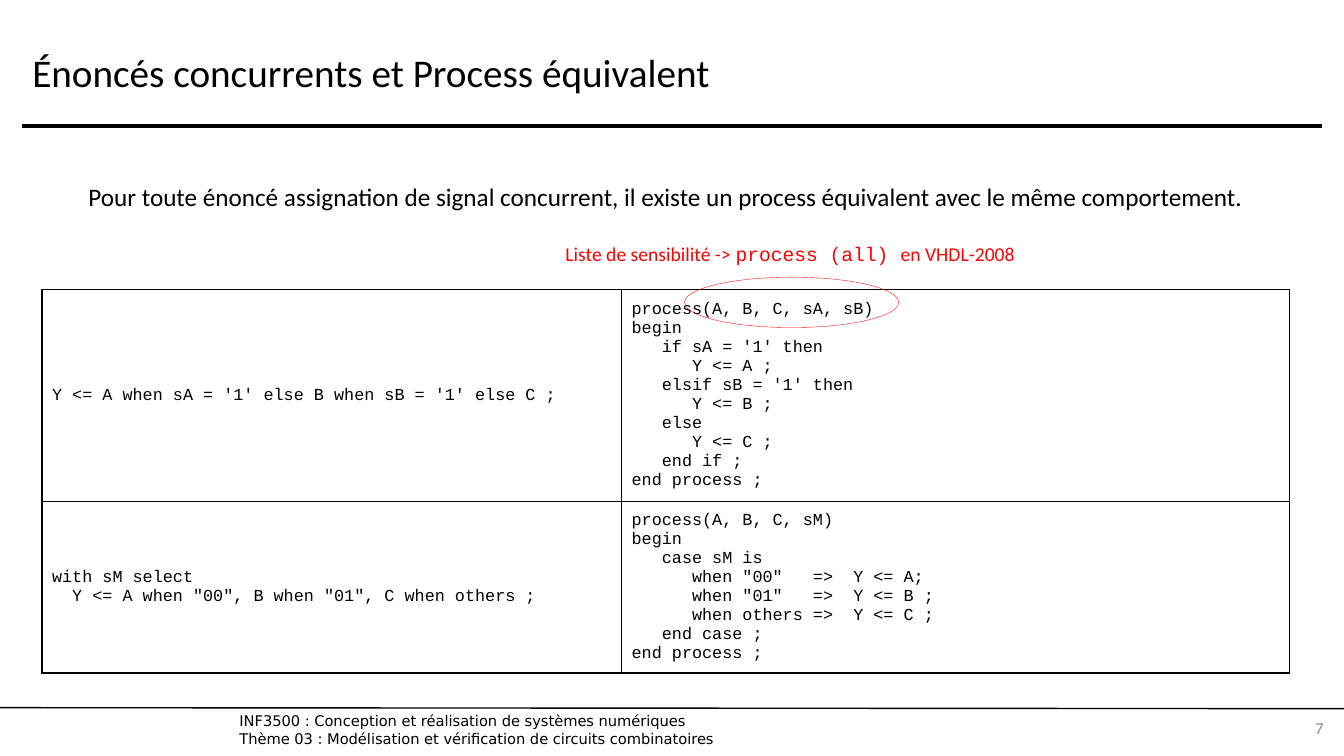
from lxml.etree import SubElement
from pptx import Presentation
from pptx.dml.color import RGBColor
from pptx.enum.shapes import MSO_CONNECTOR, MSO_SHAPE
from pptx.enum.text import MSO_ANCHOR, PP_ALIGN
from pptx.oxml import parse_xml
from pptx.oxml.ns import nsdecls, qn
from pptx.util import Pt

BLACK, RED, GRAY = "000000", "FF0000", "8C8C8C"

CONDITIONAL = "Y <= A when sA = '1' else B when sB = '1' else C ;"
CONDITIONAL_PROCESS = """process(A, B, C, sA, sB)
begin
   if sA = '1' then
      Y <= A ;
   elsif sB = '1' then
      Y <= B ;
   else
      Y <= C ;
   end if ;
end process ;"""
SELECTED = """with sM select
  Y <= A when "00", B when "01", C when others ;"""
SELECTED_PROCESS = """process(A, B, C, sM)
begin
   case sM is
      when "00"   =>  Y <= A;
      when "01"   =>  Y <= B ;
      when others =>  Y <= C ;
   end case ;
end process ;"""
EQUIVALENCES = [(CONDITIONAL, CONDITIONAL_PROCESS), (SELECTED, SELECTED_PROCESS)]


def color(value):
    """Return the colour for a hex string."""
    return RGBColor.from_string(value)


def style_font(font, size, tint=BLACK, face="Calibri"):
    """Set the size, colour and typeface of a font."""
    font.size = Pt(size)
    font.name = face
    font.color.rgb = color(tint)


def add_text(slide, box, text, size, tint=BLACK, face="Calibri",
             align=PP_ALIGN.LEFT, anchor=MSO_ANCHOR.MIDDLE):
    """Add a wrapped text box and return its frame."""
    frame = slide.shapes.add_textbox(*map(Pt, box)).text_frame
    frame.word_wrap = True
    frame.vertical_anchor = anchor
    frame.text = text
    for paragraph in frame.paragraphs:
        paragraph.alignment = align
        for run in paragraph.runs:
            style_font(run.font, size, tint, face)
    return frame


def add_rule(slide, ends, width):
    """Add a black line without shadow."""
    rule = slide.shapes.add_connector(MSO_CONNECTOR.STRAIGHT, *map(Pt, ends))
    rule.line.color.rgb = color(BLACK)
    rule.line.width = Pt(width)
    SubElement(rule._element.spPr, qn("a:effectLst"))


def add_borders(cell):
    """Draw a thin black border on the four sides of a cell."""
    properties = cell._tc.get_or_add_tcPr()
    for index, side in enumerate(("lnL", "lnR", "lnT", "lnB")):
        properties.insert(index, parse_xml(
            f'<a:{side} {nsdecls("a")} w="{Pt(1)}"><a:solidFill>'
            f'<a:srgbClr val="{BLACK}"/></a:solidFill></a:{side}>'))


def fill_code_cell(cell, code):
    """Put code in a bordered, unfilled cell."""
    cell.fill.background()
    add_borders(cell)
    cell.vertical_anchor = MSO_ANCHOR.MIDDLE
    cell.text_frame.text = code
    for paragraph in cell.text_frame.paragraphs:
        for run in paragraph.runs:
            style_font(run.font, 12, face="Courier New")


def add_code_table(slide, box, widths, heights, rows):
    """Add a plain table of code listings."""
    table = slide.shapes.add_table(len(rows), len(widths), *map(Pt, box)).table
    table.first_row = table.horz_banding = False
    for column, width in zip(table.columns, widths):
        column.width = Pt(width)
    for row, height, listings in zip(table.rows, heights, rows):
        row.height = Pt(height)
        for cell, code in zip(row.cells, listings):
            fill_code_cell(cell, code)


def add_outline_ellipse(slide, box):
    """Add a thin red ellipse without fill."""
    ellipse = slide.shapes.add_shape(MSO_SHAPE.OVAL, *map(Pt, box))
    ellipse.shadow.inherit = False
    ellipse.fill.background()
    ellipse.line.color.rgb = color(RED)
    ellipse.line.width = Pt(0.25)


def add_sensitivity_note(slide):
    """Add the red note on the sensitivity list."""
    note = add_text(slide, (387.5, 169, 357, 24.5), "Liste de sensibilité -> ", 14,
                    RED, align=PP_ALIGN.CENTER, anchor=MSO_ANCHOR.TOP)
    for text, face in (("process (all) ", "Courier New"), ("en VHDL-2008 ", "Calibri")):
        run = note.paragraphs[0].add_run()
        run.text = text
        style_font(run.font, 14, RED, face)


def add_footer(slide):
    """Add the footer rule, course name and page number."""
    add_rule(slide, (0, 505.5, 960, 506.2), 1)
    course = add_text(slide, (165, 508.5, 538.5, 25),
                      "INF3500 : Conception et réalisation de systèmes numériques\n"
                      "Thème 03 : Modélisation et vérification de circuits combinatoires",
                      10.5, face="DejaVu Sans")
    course.margin_left = Pt(6)
    course.margin_top = course.margin_right = course.margin_bottom = 0
    add_text(slide, (904.5, 505.5, 48, 28.8), "7", 12, GRAY, align=PP_ALIGN.RIGHT)


def main():
    """Build and save the slide."""
    deck = Presentation()
    deck.slide_width, deck.slide_height = Pt(960), Pt(540)
    slide = deck.slides.add_slide(deck.slide_layouts[6])
    add_rule(slide, (16, 90, 944, 90), 3)
    add_footer(slide)
    add_text(slide, (16, 12, 928, 78), "Énoncés concurrents et Process équivalent", 28)
    add_code_table(slide, (30, 207, 891, 242), (414, 477), (130, 112), EQUIVALENCES)
    add_text(slide, (30, 126, 891, 29),
             "Pour toute énoncé assignation de signal concurrent, "
             "il existe un process équivalent avec le même comportement.",
             18, align=PP_ALIGN.CENTER, anchor=MSO_ANCHOR.TOP)
    add_outline_ellipse(slide, (489, 198, 153, 36))
    add_sensitivity_note(slide)
    deck.save("out.pptx")


if __name__ == "__main__":
    main()
